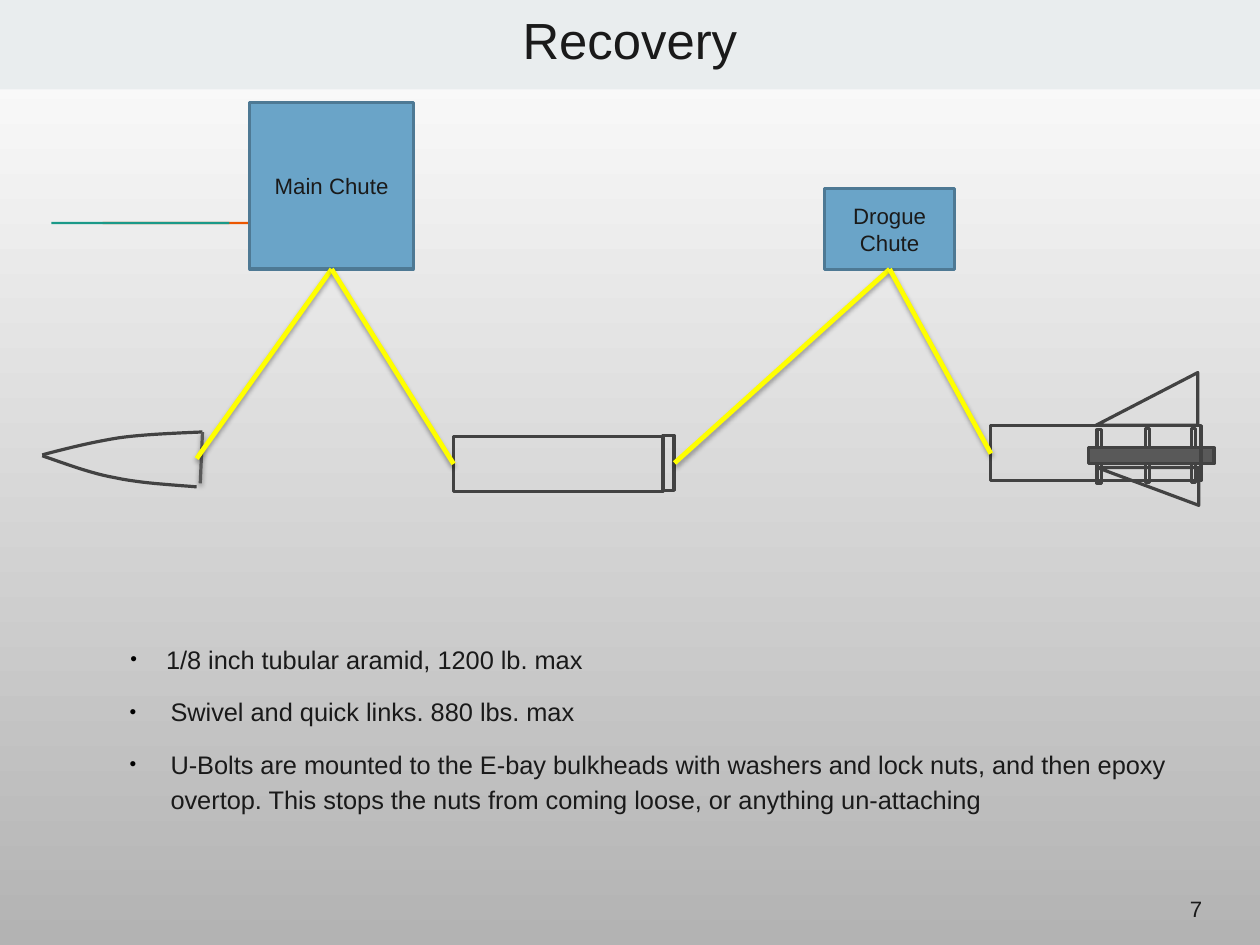
from dataclasses import dataclass

from lxml import etree
from pptx import Presentation, util as u
from pptx.dml.color import RGBColor
from pptx.enum import shapes, text
from pptx.oxml import ns

INK, OUTLINE, CORD = "1A1A1A", "424242", "FFFF00"
CHUTE_FILL, CHUTE_LINE = "6AA4C8", "4E7994"
MSO = shapes.MSO_SHAPE
Point = tuple[float, float]


@dataclass
class Box:
    """A preset shape; lengths are in centimetres."""
    x: float
    y: float
    w: float
    h: float
    fill: str | None = None
    line: str | None = OUTLINE
    kind: int = MSO.RECTANGLE
    rotation: float = 0
    flip: bool = False
    lines: tuple[str, ...] = ()


@dataclass
class Bullet:
    words: str
    indent: float = 2.39
    hang: float = 0.91
    before: float = 11


@dataclass
class Cord:
    start: Point
    end: Point
    color: str = CORD
    width: float = 3


def rgb(value: str) -> RGBColor:
    return RGBColor.from_string(value)


def set_font(p, size: float) -> None:
    p.font.name, p.font.size = "Arial", u.Pt(size)
    p.font.color.rgb = rgb(INK)


def style(sp, fill: str | None, line: str | None) -> None:
    sp.shadow.inherit = False
    if fill:
        sp.fill.solid()
        sp.fill.fore_color.rgb = rgb(fill)
    else:
        sp.fill.background()
    if line:
        sp.line.color.rgb = rgb(line)
        sp.line.width = u.Pt(2)
    else:
        sp.line.fill.background()


def draw_box(s, box: Box) -> None:
    sp = s.shapes.add_shape(box.kind, *map(u.Cm, (box.x, box.y, box.w, box.h)))
    style(sp, box.fill, box.line)
    sp.rotation = box.rotation
    if box.flip:
        sp.element.spPr.xfrm.set("flipH", "1")
    tf = sp.text_frame
    for i, words in enumerate(box.lines):
        p = tf.add_paragraph() if i else tf.paragraphs[0]
        p.text, p.alignment = words, text.PP_ALIGN.CENTER
        set_font(p, 14)


def draw_curve(s, points: list[Point], steps: int = 12) -> None:
    """Draw joined cubic Bezier curves: a start, then three points for each."""
    track = [points[0]]
    for i in range(0, len(points) - 1, 3):
        a, b, c, d = points[i:i + 4]
        for t in (n / steps for n in range(1, steps + 1)):
            v = 1 - t
            track.append(tuple(
                v**3 * a[k] + 3 * v * v * t * b[k] + 3 * v * t * t * c[k] + t**3 * d[k]
                for k in (0, 1)))
    track = [(u.Cm(x), u.Cm(y)) for x, y in track]
    outline = s.shapes.build_freeform(*track[0])
    outline.add_line_segments(track[1:], close=False)
    style(outline.convert_to_shape(), None, OUTLINE)


def draw_cord(s, cord: Cord) -> None:
    line = s.shapes.add_connector(
        shapes.MSO_CONNECTOR.STRAIGHT, *map(u.Cm, cord.start + cord.end))
    line.line.color.rgb = rgb(cord.color)
    line.line.width = u.Pt(cord.width)
    effects = etree.SubElement(line.element.spPr, ns.qn("a:effectLst"))
    shadow = etree.SubElement(
        effects, ns.qn("a:outerShdw"), blurRad=str(u.Pt(3.1)),
        dist=str(u.Pt(1.8)), dir="5400000", rotWithShape="0")
    color = etree.SubElement(shadow, ns.qn("a:srgbClr"), val="000000")
    etree.SubElement(color, ns.qn("a:alpha"), val="35000")


def add_text(s, x: float, y: float, w: float, h: float, inset: float, top: float):
    tf = s.shapes.add_textbox(*map(u.Cm, (x, y, w, h))).text_frame
    tf.word_wrap = True
    tf.margin_left = tf.margin_right = tf.margin_bottom = u.Cm(inset)
    tf.margin_top = u.Cm(top)
    return tf


def add_bullet(p, bullet: Bullet) -> None:
    p.text = bullet.words
    p.line_spacing, p.space_before = 1.15, u.Pt(bullet.before)
    set_font(p, 16)
    props = p._p.get_or_add_pPr()
    props.set("marL", str(u.Cm(bullet.indent)))
    props.set("indent", str(-u.Cm(bullet.hang)))
    marks = [etree.Element(ns.qn("a:buClr")),
             etree.Element(ns.qn("a:buSzPct"), val="75000"),
             etree.Element(ns.qn("a:buFont"), typeface="Arial"),
             etree.Element(ns.qn("a:buChar"), char="•")]
    etree.SubElement(marks[0], ns.qn("a:srgbClr"), val="000000")
    following = props.find(ns.qn("a:defRPr"))
    for mark in marks:
        following.addprevious(mark)


BACKDROP = [
    Box(0, 0, 28, 1.99, "E9EDEE", None),
    Box(2.28, 4.93, 3.96, 0.05, "EB5600", None),
    Box(1.14, 4.93, 3.96, 0.05, "1A9988", None),
]
ROCKET = [
    *(Box(x, y, 0.1, 1.19) for x, y in ((24.38, 9.55), (25.45, 9.53), (26.47, 9.53))),
    Box(14.73, 9.68, 0.25, 1.22),
    Box(5.55, 2.28, 3.64, 3.7, CHUTE_FILL, CHUTE_LINE, lines=("Main Chute",)),
    Box(18.32, 4.19, 2.9, 1.8, CHUTE_FILL, CHUTE_LINE, lines=("Drogue", "Chute")),
    Box(24.19, 9.95, 2.79, 0.36, "595959"),
    Box(10.08, 9.7, 4.67, 1.22),
    Box(22.02, 9.46, 4.67, 1.22),
    Box(24.36, 8.28, 2.26, 1.17, kind=MSO.RIGHT_TRIANGLE, flip=True),
    Box(24.38, 10.39, 2.26, 0.84, kind=MSO.RIGHT_TRIANGLE, rotation=180),
]
NOSE = [
    [(4.5, 9.6), (3.86, 9.63), (3.23, 9.65), (2.64, 9.73),
     (2.03, 9.83), (1.5, 9.96), (0.94, 10.11)],
    [(4.37, 10.82), (3.76, 10.77), (3.15, 10.74), (2.57, 10.62),
     (2.01, 10.52), (1.47, 10.31), (0.94, 10.13)],
]
MAIN, DROGUE = (7.37, 5.98), (19.77, 5.98)
CORDS = [
    Cord((4.5, 9.6), (4.45, 10.74), "595959", 2),
    Cord((4.37, 10.19), MAIN),
    Cord((10.08, 10.31), MAIN),
    Cord((14.99, 10.29), DROGUE),
    Cord((22.02, 10.08), DROGUE),
]
BULLETS = [
    Bullet("1/8 inch tubular aramid, 1200 lb. max", 2.29, 0.79, 14),
    Bullet("Swivel and quick links. 880 lbs. max"),
    Bullet("U-Bolts are mounted to the E-bay bulkheads with washers and lock nuts, "
           "and then epoxy overtop. This stops the nuts from coming loose, "
           "or anything un-attaching"),
]


def main() -> None:
    prs = Presentation()
    prs.slide_width, prs.slide_height = u.Cm(28), u.Cm(21)
    s = prs.slides.add_slide(prs.slide_layouts[6])
    fill = s.background.fill
    fill.gradient()
    fill.gradient_angle = 270
    for stop, color in zip(fill.gradient_stops, ("FFFFFF", "B3B3B3")):
        stop.color.rgb = rgb(color)

    for box in BACKDROP:
        draw_box(s, box)

    title = add_text(s, 1.4, -0.14, 25.2, 2.08, 0, 0.08)
    title.vertical_anchor = text.MSO_ANCHOR.MIDDLE
    p = title.paragraphs[0]
    p.text, p.alignment, p.line_spacing = "Recovery", text.PP_ALIGN.CENTER, 0.93
    set_font(p, 32)

    body = add_text(s, 1.4, 14.16, 25.2, 5.23, 0, 0.05)
    for i, bullet in enumerate(BULLETS):
        add_bullet(body.add_paragraph() if i else body.paragraphs[0], bullet)

    number = add_text(s, 26.14, 19.39, 1.68, 1.6, 0.3, 0.3)
    number.vertical_anchor = text.MSO_ANCHOR.MIDDLE
    p = number.paragraphs[0]
    p.text = "7"
    set_font(p, 14)

    for points in NOSE:
        draw_curve(s, points)
    for box in ROCKET:
        draw_box(s, box)
    for cord in CORDS:
        draw_cord(s, cord)
    prs.save("out.pptx")


if __name__ == "__main__":
    main()
